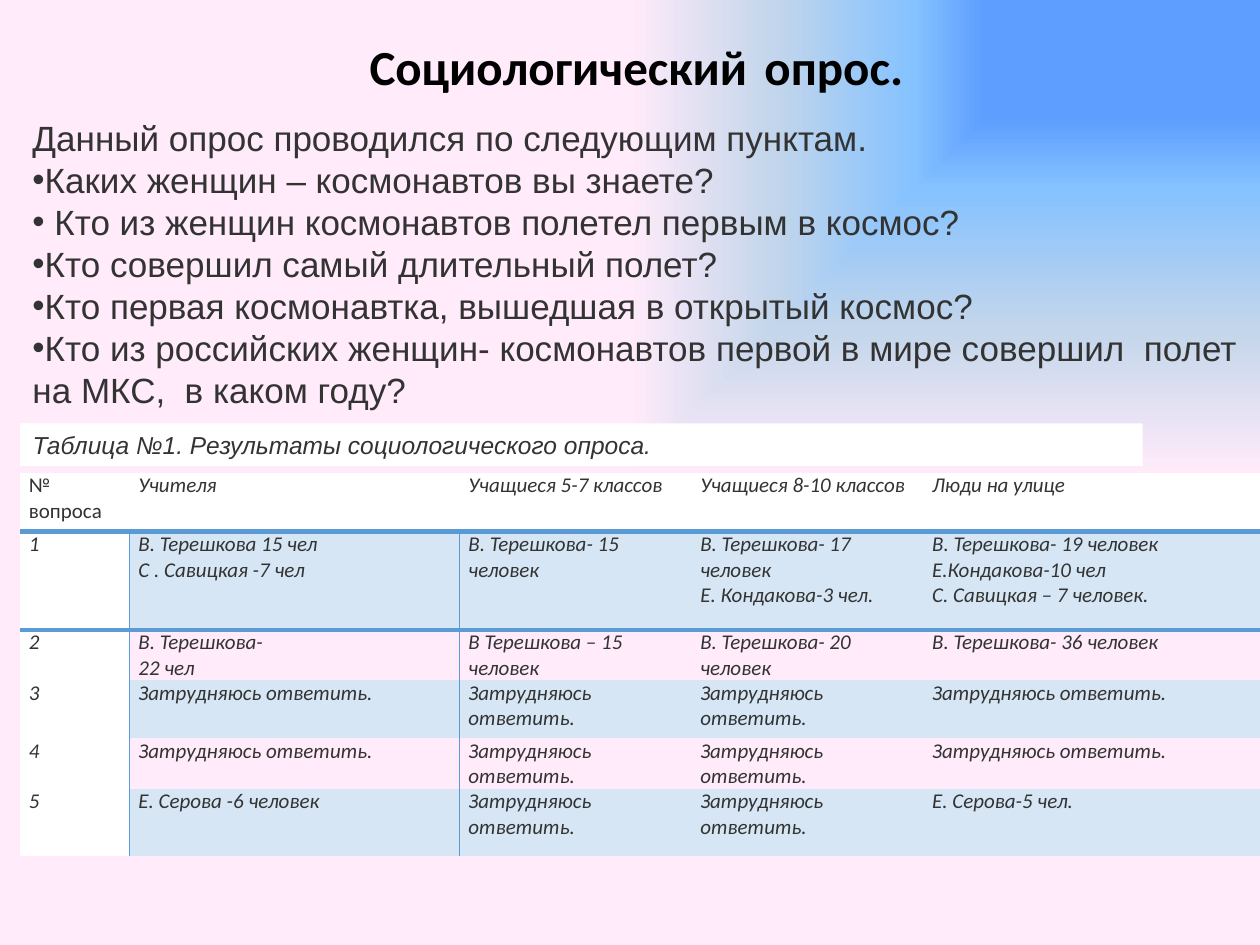
from lxml import etree
from pptx import Presentation
from pptx.dml.color import RGBColor
from pptx.enum.shapes import MSO_SHAPE
from pptx.enum.text import MSO_ANCHOR, MSO_AUTO_SIZE, PP_ALIGN
from pptx.oxml import parse_xml
from pptx.oxml.ns import nsdecls, qn
from pptx.util import Pt

MIDDLE = MSO_ANCHOR.MIDDLE
GROW = MSO_AUTO_SIZE.SHAPE_TO_FIT_TEXT
CENTER = PP_ALIGN.CENTER
RECTANGLE = MSO_SHAPE.RECTANGLE
NO_STYLE = "{2D5ABB26-0587-4C30-8999-92F81FD0307C}"

COLORS = {
    "title": "000000", "text": "333333", "white": "FFFFFF",
    "band": "D6E6F4", "line": "5B9BD5",
}
BACKGROUND_STOPS = [(25, "5E9EFF"), (40, "85C2FF"), (70, "C4D6EB"), (100, "FFEBFA")]


def add_run(paragraph, text, size, font="Arial", color="text", bold=False, italic=False):
    run = paragraph.add_run()
    run.text = text
    run.font.size = Pt(size)
    run.font.name = font
    run.font.bold = bold
    run.font.italic = italic
    run.font.color.rgb = RGBColor.from_string(COLORS[color])


def add_border(cell, side, width):
    line = etree.SubElement(cell._tc.get_or_add_tcPr(), qn(f"a:ln{side}"), w=str(Pt(width)))
    fill = etree.SubElement(line, qn("a:solidFill"))
    etree.SubElement(fill, qn("a:srgbClr"), val=COLORS["line"])


prs = Presentation()
prs.slide_width, prs.slide_height = Pt(720), Pt(540)
slide = prs.slides.add_slide(prs.slide_layouts[6])

# Background: gradient spreading from the top right corner
slide.background.fill.solid()
background = slide.element.find(".//" + qn("p:bgPr"))
stops = "".join(
    f'<a:gs pos="{pos * 1000}"><a:srgbClr val="{color}"/></a:gs>'
    for pos, color in BACKGROUND_STOPS
)
background.replace(background[0], parse_xml(
    f'<a:gradFill {nsdecls("a")} rotWithShape="1"><a:gsLst>{stops}</a:gsLst>'
    '<a:path path="rect"><a:fillToRect l="100000" b="100000"/></a:path></a:gradFill>'
))

# Title
title = slide.shapes.add_textbox(Pt(39.6), Pt(0), Pt(648), Pt(62)).text_frame
title.word_wrap = True
title.vertical_anchor = MIDDLE
heading = title.paragraphs[0]
heading.alignment = CENTER
for text, size in [("Социологический", 28), (" ", 44), ("опрос.", 28)]:
    add_run(heading, text, size, "Calibri", "title", bold=True)

# Results table
HARD = "Затрудняюсь ответить."
results = [
    ["№ вопроса", "Учителя", "Учащиеся 5-7 классов", "Учащиеся 8-10 классов",
     "Люди на улице"],
    ["1", "В. Терешкова 15 чел\nС . Савицкая -7 чел", "В. Терешкова- 15 человек",
     "В. Терешкова- 17 человек\nЕ. Кондакова-3 чел.",
     "В. Терешкова- 19 человек\nЕ.Кондакова-10 чел\nС. Савицкая – 7 человек."],
    ["2", "В. Терешкова-\n22 чел", "В Терешкова – 15 человек",
     "В. Терешкова- 20 человек", "В. Терешкова- 36 человек"],
    ["3"] + [HARD] * 4,
    ["4"] + [HARD] * 4,
    ["5", "Е. Серова -6 человек", HARD, HARD, "Е. Серова-5 чел."],
]
column_widths = [62.6, 188.6, 132.5, 132.5, 192.6]
row_heights = [33.8, 56.2, 28.1, 33.1, 28.1, 38.2]

table_frame = slide.shapes.add_table(
    len(row_heights), len(column_widths), Pt(11.5), Pt(270),
    Pt(sum(column_widths)), Pt(sum(row_heights)))
table = table_frame.table
table._tbl.tblPr.find(qn("a:tableStyleId")).text = NO_STYLE
table.horz_banding = False
for column, width in zip(table.columns, column_widths):
    column.width = Pt(width)

last_col = len(column_widths) - 1
for r, answers in enumerate(results):
    table.rows[r].height = Pt(row_heights[r])
    for c, answer in enumerate(answers):
        cell = table.cell(r, c)
        cell.margin_left = cell.margin_right = Pt(5)
        cell.margin_top = cell.margin_bottom = Pt(0)
        for i, line in enumerate(answer.split("\n")):
            paragraph = cell.text_frame.add_paragraph() if i else cell.text_frame.paragraphs[0]
            add_run(paragraph, line, 12, "Calibri", italic=(r, c) != (0, 0))

        # Borders come before the fill in the cell properties
        if r > 0 and c == 1:
            add_border(cell, "L", 1)
        if r > 0 and c in (0, last_col):
            add_border(cell, "R", 1)
        if r == 1:
            add_border(cell, "T", 3)
        if r == 0:
            add_border(cell, "B", 3)

        if r > 0 and c > 0 and r % 2 == 0:
            cell.fill.background()
        else:
            cell.fill.solid()
            shade = "white" if r == 0 or c == 0 else "band"
            cell.fill.fore_color.rgb = RGBColor.from_string(COLORS[shade])

# Table caption
caption = slide.shapes.add_shape(RECTANGLE, Pt(11.5), Pt(242), Pt(641.5), Pt(24.2))
caption.shadow.inherit = False
caption.fill.solid()
caption.fill.fore_color.rgb = RGBColor.from_string(COLORS["white"])
caption.line.fill.background()
caption.text_frame.word_wrap = True
caption.text_frame.auto_size = GROW
caption.text_frame.vertical_anchor = MIDDLE
caption_line = caption.text_frame.paragraphs[0]
caption_line.alignment = PP_ALIGN.LEFT
add_run(caption_line, "Таблица №1. Результаты социологического опроса.", 14, italic=True)

# Survey questions
questions = [
    "Каких женщин – космонавтов вы знаете?",
    " Кто из женщин космонавтов полетел первым в космос?",
    "Кто совершил самый длительный полет?",
    "Кто первая космонавтка, вышедшая в открытый космос?",
    "Кто из российских женщин- космонавтов первой в мире совершил  полет  на МКС,"
    "  в каком году?",
]
survey = slide.shapes.add_textbox(Pt(11.5), Pt(62), Pt(720), Pt(177)).text_frame
survey.word_wrap = True
survey.auto_size = GROW
survey.vertical_anchor = MIDDLE
add_run(survey.paragraphs[0], "Данный опрос проводился по следующим пунктам.", 20)
for question in questions:
    paragraph = survey.add_paragraph()
    properties = paragraph._p.get_or_add_pPr()
    etree.SubElement(properties, qn("a:buFont"), typeface="Arial")
    etree.SubElement(properties, qn("a:buChar"), char="•")
    add_run(paragraph, question, 20)

prs.save("out.pptx")
